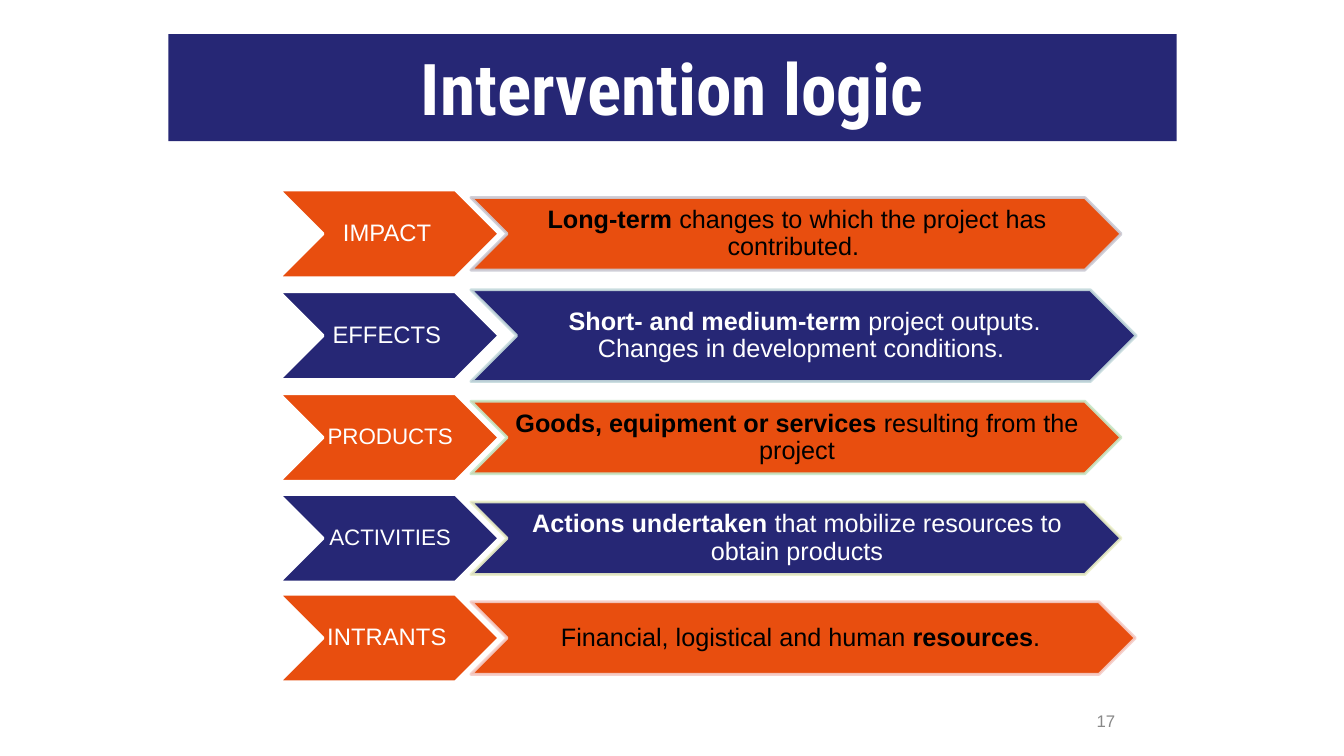
"""Build the intervention logic slide: five labelled levels as chevron pairs."""
from lxml import etree
from pptx import Presentation
from pptx.dml.color import RGBColor
from pptx.enum.shapes import MSO_SHAPE as Shape
from pptx.enum.text import MSO_ANCHOR as Anchor, PP_ALIGN as Align
from pptx.oxml.ns import qn
from pptx.util import Inches, Pt

NAVY, ORANGE, WHITE, BLACK, GREY = "262775", "E84E0F", "FFFFFF", "000000", "888888"
TITLE = "Intervention logic"
PAGE = "17"
# label, label size, centre y, bar width, bar height, bar outline, (text, bold) parts
ROWS = [
    ("IMPACT ", 17, 2.32, 6.45, 0.72, "CBCBD5",
     [("Long-term ", True), ("changes to which the project has contributed. ", False)]),
    ("EFFECTS ", 17, 3.33, 6.6, 0.91, "C7DCDE",
     [("Short- and medium-term ", True),
      ("project outputs. Changes in development conditions. ", False)]),
    ("PRODUCTS ", 16, 4.34, 6.45, 0.72, "C7E7C7",
     [("Goods, equipment or services ", True), ("resulting from the project", False)]),
    ("ACTIVITIES", 16, 5.34, 6.45, 0.72, "EBEFC7",
     [("Actions undertaken ", True), ("that mobilize resources to obtain products", False)]),
    ("INTRANTS ", 17, 6.33, 6.59, 0.72, "F5CDC8",
     [("Financial, logistical and human ", False), ("resources", True), (". ", False)]),
]
LABEL_X, LABEL_W, LABEL_H = 2.77, 2.18, 0.87
BAR_X = 4.67


def color(code):
    return RGBColor.from_string(code)


def write(shape, parts, size, ink, font="Arial", align=Align.CENTER,
          anchor=Anchor.MIDDLE, pads=(0.02, 0.01, 0, 0.01), space=0.9):
    frame = shape.text_frame
    frame.word_wrap = True
    frame.vertical_anchor = anchor
    (frame.margin_left, frame.margin_top,
     frame.margin_right, frame.margin_bottom) = map(Inches, pads)
    para = frame.paragraphs[0]
    para.alignment, para.line_spacing = align, space
    for text, bold in parts:
        run = para.add_run()
        run.text = text
        run.font.name, run.font.size, run.font.bold = font, Pt(size), bold
        run.font.color.rgb = color(ink)


def draw(slide, kind, box, fill):
    shape = slide.shapes.add_shape(kind, *map(Inches, box))
    shape.shadow.inherit = False
    shape.fill.solid()
    shape.fill.fore_color.rgb = color(fill)
    shape.line.fill.background()
    return shape


def arrow(slide, x, mid, wide, high, fill, edge, alpha, parts, size, ink):
    top = mid - high / 2
    shape = draw(slide, Shape.CHEVRON, (x, top, wide, high), fill)
    shape.line.color.rgb = color(edge)
    shape.line.width = Pt(2)
    tint = shape.line._ln.find(".//" + qn("a:srgbClr"))
    etree.SubElement(tint, qn("a:alpha")).set("val", str(alpha * 1000))
    box = (x + high / 2, top, wide - high, high)
    write(slide.shapes.add_textbox(*map(Inches, box)), parts, size, ink)


def main():
    deck = Presentation()
    deck.slide_width, deck.slide_height = Inches(13.33), Inches(7.5)
    slide = deck.slides.add_slide(deck.slide_layouts[6])

    page = slide.shapes.add_textbox(*map(Inches, (8.83, 6.95, 2.33, 0.4)))
    write(page, [(PAGE, False)], 12, GREY, align=Align.RIGHT,
          pads=(0.1, 0.05, 0.1, 0.05), space=1.0)
    banner = draw(slide, Shape.RECTANGLE, (1.67, 0.34, 10, 1.06), NAVY)
    write(banner, [(TITLE, True)], 51, WHITE, "Roboto Condensed",
          anchor=Anchor.TOP, pads=(0.1,) * 4, space=1.0)

    for i, (label, size, mid, wide, high, edge, parts) in enumerate(ROWS):
        fill, ink = ((ORANGE, BLACK), (NAVY, WHITE))[i % 2]
        arrow(slide, LABEL_X, mid, LABEL_W, LABEL_H, fill, WHITE, 100,
              [(label, False)], size, WHITE)
        arrow(slide, BAR_X, mid, wide, high, fill, edge, 89, parts, 18, ink)

    deck.save("out.pptx")


if __name__ == "__main__":
    main()
